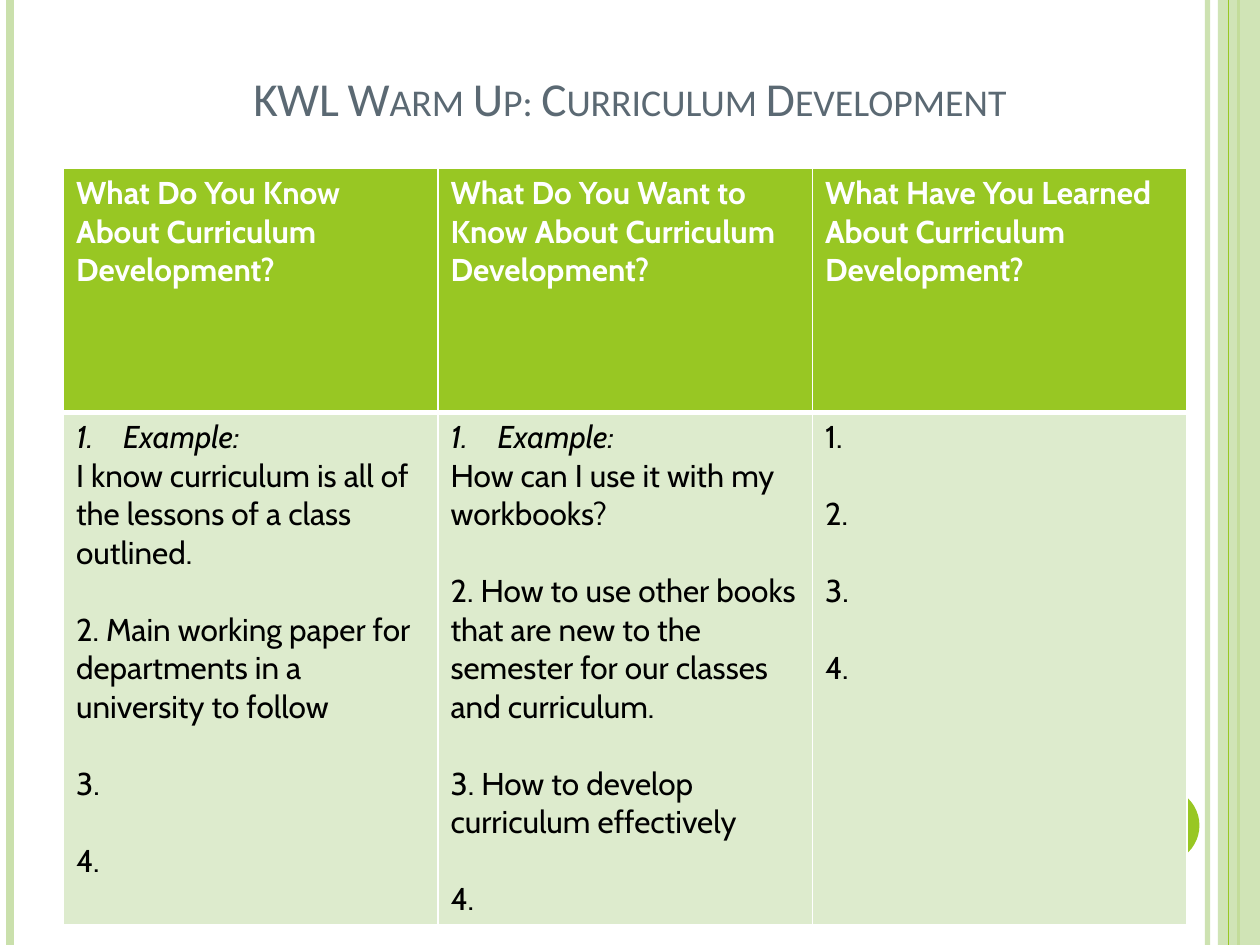
"""Build the KWL warm-up slide: a title, a three-column table and green side rails."""
from lxml import etree
from pptx import Presentation
from pptx.dml.color import RGBColor
from pptx.enum.shapes import MSO_CONNECTOR, MSO_SHAPE
from pptx.enum.text import MSO_ANCHOR, PP_ALIGN
from pptx.oxml.ns import qn
from pptx.util import Cm, Pt

STRAIGHT = MSO_CONNECTOR.STRAIGHT
RECTANGLE, OVAL = MSO_SHAPE.RECTANGLE, MSO_SHAPE.OVAL
BOTTOM, CENTER = MSO_ANCHOR.BOTTOM, PP_ALIGN.CENTER

GREEN = RGBColor(0x98, 0xC7, 0x23)
LIGHT_GREEN = RGBColor(0xCA, 0xE0, 0xAC)
PALE_GREEN = RGBColor(0xDD, 0xEB, 0xCD)
SLATE = RGBColor(0x5B, 0x69, 0x73)
WHITE = RGBColor(0xFF, 0xFF, 0xFF)
BLACK = RGBColor(0, 0, 0)

TITLE = "KWL Warm Up: Curriculum Development"
EXAMPLE = "Example:"
COLUMNS = [
    ("What Do You Know About Curriculum Development?",
     [EXAMPLE,
      "I know curriculum is all of the lessons of a class outlined.",
      "2. Main working paper for departments in a university to follow",
      "3.", "4."]),
    ("What Do You Want to Know About Curriculum Development?",
     [EXAMPLE,
      "How can I use it with my workbooks?",
      "2. How to use other books that are new to the semester for our classes "
      "and curriculum.",
      "3. How to develop curriculum effectively", "4."]),
    ("What Have You Learned About Curriculum Development?",
     ["1.", "2.", "3.", "4."]),
]

SLIDE_WIDTH, SLIDE_HEIGHT = Cm(25.4), Cm(19.05)
TABLE_LEFT, TABLE_TOP, TABLE_WIDTH = Cm(1.28), Cm(3.39), Cm(22.65)
HEADER_HEIGHT, BODY_HEIGHT = Cm(4.92), Cm(10.2)
NUMBER_INDENT = Cm(0.95)
ITEM_GAP = Pt(22)
THIN, THICK = Pt(1), Pt(3)

OUTER_RAILS = [(24.34, LIGHT_GREEN, 3, 93), (0.21, LIGHT_GREEN, 4.5, 100),
               (24.97, GREEN, 1.5, 100)]
BAND = (RECTANGLE, (24.55, 0, 0.85, 19.05), LIGHT_GREEN, 87)
INNER_RAILS = [(24.77, GREEN, 0.75, 100)]
BADGE = (OVAL, (22.66, 15.88, 1.52, 1.52), GREEN, 100)


def set_opacity(properties, percent):
    if percent < 100:
        color = next(properties.iter(qn("a:srgbClr")))
        etree.SubElement(color, qn("a:alpha"), val=str(percent * 1000))


def add_rail(slide, x, color, weight, opacity):
    rail = slide.shapes.add_connector(STRAIGHT, Cm(x), 0, Cm(x), SLIDE_HEIGHT)
    rail.line.color.rgb = color
    rail.line.width = Pt(weight)
    properties = rail._element.spPr
    set_opacity(properties, opacity)
    etree.SubElement(properties, qn("a:effectLst"))


def add_ornament(slide, kind, box, color, opacity):
    ornament = slide.shapes.add_shape(kind, *map(Cm, box))
    ornament.shadow.inherit = False
    ornament.fill.solid()
    ornament.fill.fore_color.rgb = color
    ornament.line.fill.background()
    set_opacity(ornament._element.spPr, opacity)


def add_title(slide):
    title = slide.shapes.title
    title.left, title.top, title.width, title.height = map(Cm, (3.6, 1.07, 18.2, 1.6))
    frame = title.text_frame
    frame.text = TITLE
    frame.word_wrap = True
    frame.vertical_anchor = BOTTOM
    heading = frame.paragraphs[0]
    heading.alignment = CENTER
    font = heading.runs[0].font
    font.name, font.size, font.color.rgb = "Calibri", Pt(27), SLATE
    font._element.set("cap", "small")


def set_borders(cell, top, bottom):
    properties = cell._tc.get_or_add_tcPr()
    edges = [("L", THIN), ("R", THIN), ("T", top), ("B", bottom)]
    for position, (side, weight) in enumerate(edges):
        border = etree.Element(qn(f"a:ln{side}"), w=str(weight))
        fill = etree.SubElement(border, qn("a:solidFill"))
        etree.SubElement(fill, qn("a:srgbClr"), val=str(WHITE))
        properties.insert(position, border)


def number_paragraph(paragraph):
    properties = paragraph._p.get_or_add_pPr()
    properties.set("marL", str(NUMBER_INDENT))
    properties.set("indent", str(-NUMBER_INDENT))
    etree.SubElement(properties, qn("a:buFont"), typeface="+mj-lt")
    etree.SubElement(properties, qn("a:buAutoNum"), type="arabicPeriod")


def fill_cell(cell, lines, background, color, bold):
    cell.fill.solid()
    cell.fill.fore_color.rgb = background
    cell.text_frame.text = "\n".join(lines)
    for position, paragraph in enumerate(cell.text_frame.paragraphs):
        is_example = paragraph.text == EXAMPLE
        font = paragraph.runs[0].font
        font.name, font.size, font.color.rgb = "Cabin", Pt(18), color
        font.bold, font.italic = bold, is_example
        if position and lines[position - 1] != EXAMPLE:
            paragraph.space_before = ITEM_GAP
        if is_example:
            number_paragraph(paragraph)


def add_kwl_table(slide):
    table = slide.shapes.add_table(2, len(COLUMNS), TABLE_LEFT, TABLE_TOP, TABLE_WIDTH,
                                   HEADER_HEIGHT + BODY_HEIGHT).table
    table.rows[0].height, table.rows[1].height = HEADER_HEIGHT, BODY_HEIGHT
    for index, (question, answers) in enumerate(COLUMNS):
        header, body = table.cell(0, index), table.cell(1, index)
        fill_cell(header, [question], GREEN, WHITE, True)
        fill_cell(body, answers, PALE_GREEN, BLACK, False)
        set_borders(header, THIN, THICK)
        set_borders(body, THICK, THIN)


def main():
    deck = Presentation()
    deck.slide_width, deck.slide_height = SLIDE_WIDTH, SLIDE_HEIGHT
    slide = deck.slides.add_slide(deck.slide_layouts[5])
    for rail in OUTER_RAILS:
        add_rail(slide, *rail)
    add_ornament(slide, *BAND)
    for rail in INNER_RAILS:
        add_rail(slide, *rail)
    add_ornament(slide, *BADGE)
    add_title(slide)
    add_kwl_table(slide)
    deck.save("out.pptx")


if __name__ == "__main__":
    main()
